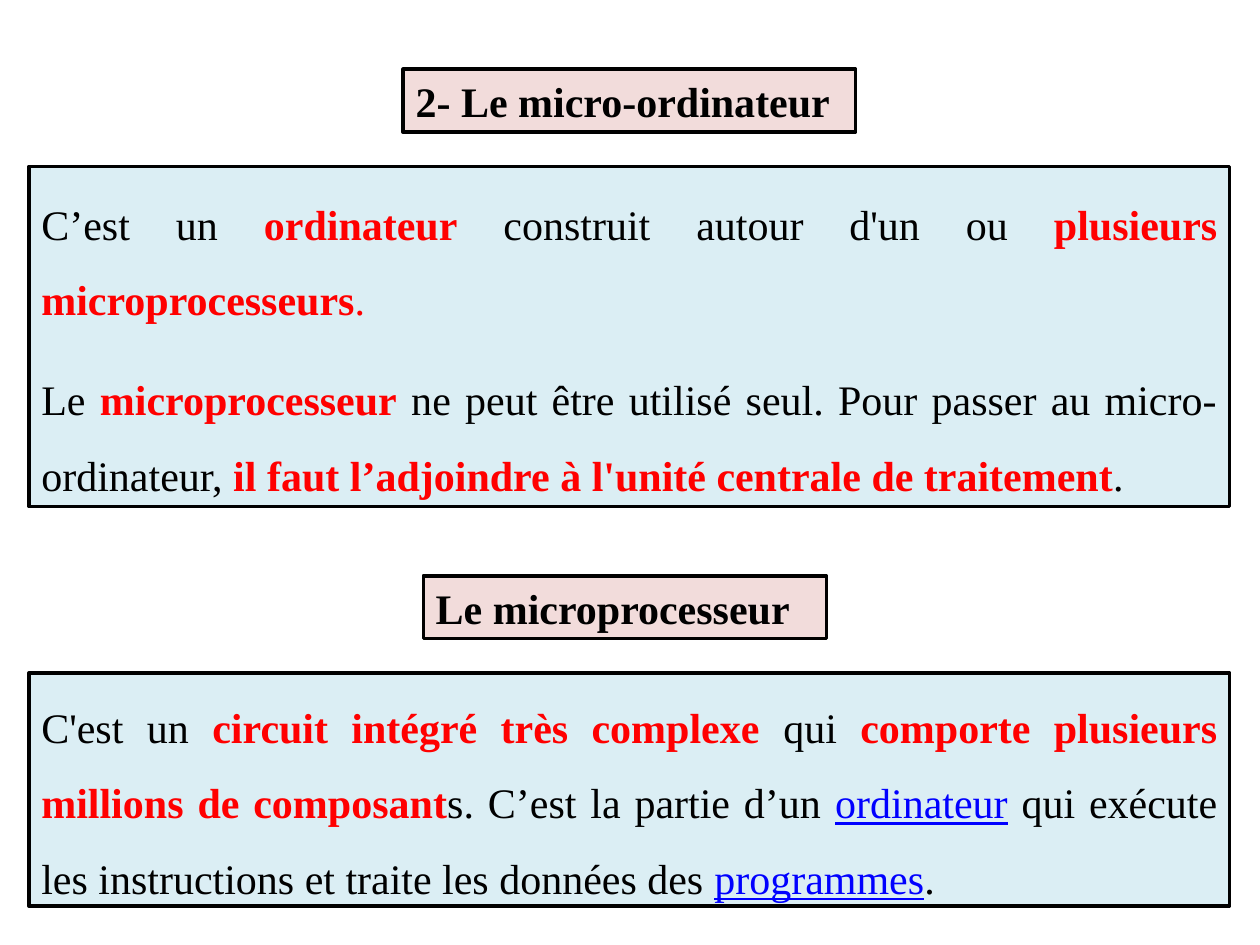
"""Build a slide on the microcomputer and the microprocessor."""
import dataclasses
import typing

import pptx
import pptx.dml.color
import pptx.enum.shapes
import pptx.enum.text
import pptx.slide
import pptx.text.text
import pptx.util

Inches = pptx.util.Inches
Color = pptx.dml.color.RGBColor
Align = pptx.enum.text.PP_ALIGN


@dataclasses.dataclass(frozen=True)
class Theme:
    font: str = "Times New Roman"
    size: int = 24
    edge: int = 2
    gap: int = 14
    ink: str = "000000"
    red: str = "FF0000"
    blue: str = "0000FF"
    pink: str = "F2DCDB"
    pale: str = "DBEEF4"


THEME = Theme()


class Bit(typing.NamedTuple):
    text: str
    hue: str = THEME.ink
    bold: bool = False
    under: bool = False


class Panel(typing.NamedTuple):
    left: float
    top: float
    width: float
    height: float
    fill: str
    align: Align
    pitch: float
    paras: list[list[Bit]]


def title(left: float, top: float, width: float, text: str) -> Panel:
    return Panel(left, top, width, 0.5, THEME.pink, Align.LEFT, 1.0,
                 [[Bit(text, bold=True)]])


def body(top: float, height: float, *paras: list[Bit]) -> Panel:
    return Panel(0.23, top, 9.53, height, THEME.pale, Align.JUSTIFY, 1.5,
                 list(paras))


def strong(text: str) -> Bit:
    return Bit(text, THEME.red, bold=True)


def term(text: str) -> Bit:
    return Bit(text, THEME.blue, under=True)


PANELS = [
    title(3.2, 0.55, 3.59, "2- Le micro-ordinateur"),
    body(
        1.32, 2.7,
        [Bit("C’est un "), strong("ordinateur"),
         Bit(" construit autour d'un ou "),
         strong("plusieurs microprocesseurs"), Bit(".", THEME.red)],
        [Bit("Le "), strong("microprocesseur"),
         Bit(" ne peut être utilisé seul. Pour passer au micro-ordinateur, "),
         strong("il faut l’adjoindre à l'unité centrale de traitement"),
         Bit(".")],
    ),
    title(3.36, 4.57, 3.2, "Le microprocesseur"),
    body(
        5.34, 1.85,
        [Bit("C'est un "), strong("circuit intégré très complexe "),
         Bit("qui "), strong("comporte plusieurs millions de composant"),
         Bit("s. C’est la partie d’un "), term("ordinateur"),
         Bit(" qui exécute les instructions et traite les données des "),
         term("programmes"), Bit(".")],
    ),
]


def write(para: pptx.text.text._Paragraph, bit: Bit) -> None:
    run = para.add_run()
    run.text = bit.text
    font = run.font
    font.name = THEME.font
    font.size = pptx.util.Pt(THEME.size)
    font.bold = bit.bold
    font.underline = bit.under
    font.color.rgb = Color.from_string(bit.hue)


def draw(slide: pptx.slide.Slide, panel: Panel) -> None:
    box = slide.shapes.add_shape(
        pptx.enum.shapes.MSO_SHAPE.RECTANGLE,
        Inches(panel.left), Inches(panel.top),
        Inches(panel.width), Inches(panel.height))
    box.shadow.inherit = False
    box.fill.solid()
    box.fill.fore_color.rgb = Color.from_string(panel.fill)
    box.line.color.rgb = Color.from_string(THEME.ink)
    box.line.width = pptx.util.Pt(THEME.edge)
    frame = box.text_frame
    frame.word_wrap = True
    frame.vertical_anchor = pptx.enum.text.MSO_ANCHOR.MIDDLE
    for rank, bits in enumerate(panel.paras):
        para = frame.add_paragraph() if rank else frame.paragraphs[0]
        para.alignment = panel.align
        para.line_spacing = panel.pitch
        para.space_before = pptx.util.Pt(THEME.gap if rank else 0)
        for bit in bits:
            write(para, bit)


def main() -> None:
    deck = pptx.Presentation()
    deck.slide_width = Inches(10)
    deck.slide_height = Inches(7.5)
    slide = deck.slides.add_slide(deck.slide_layouts[6])
    for panel in PANELS:
        draw(slide, panel)
    deck.save("out.pptx")


if __name__ == "__main__":
    main()
